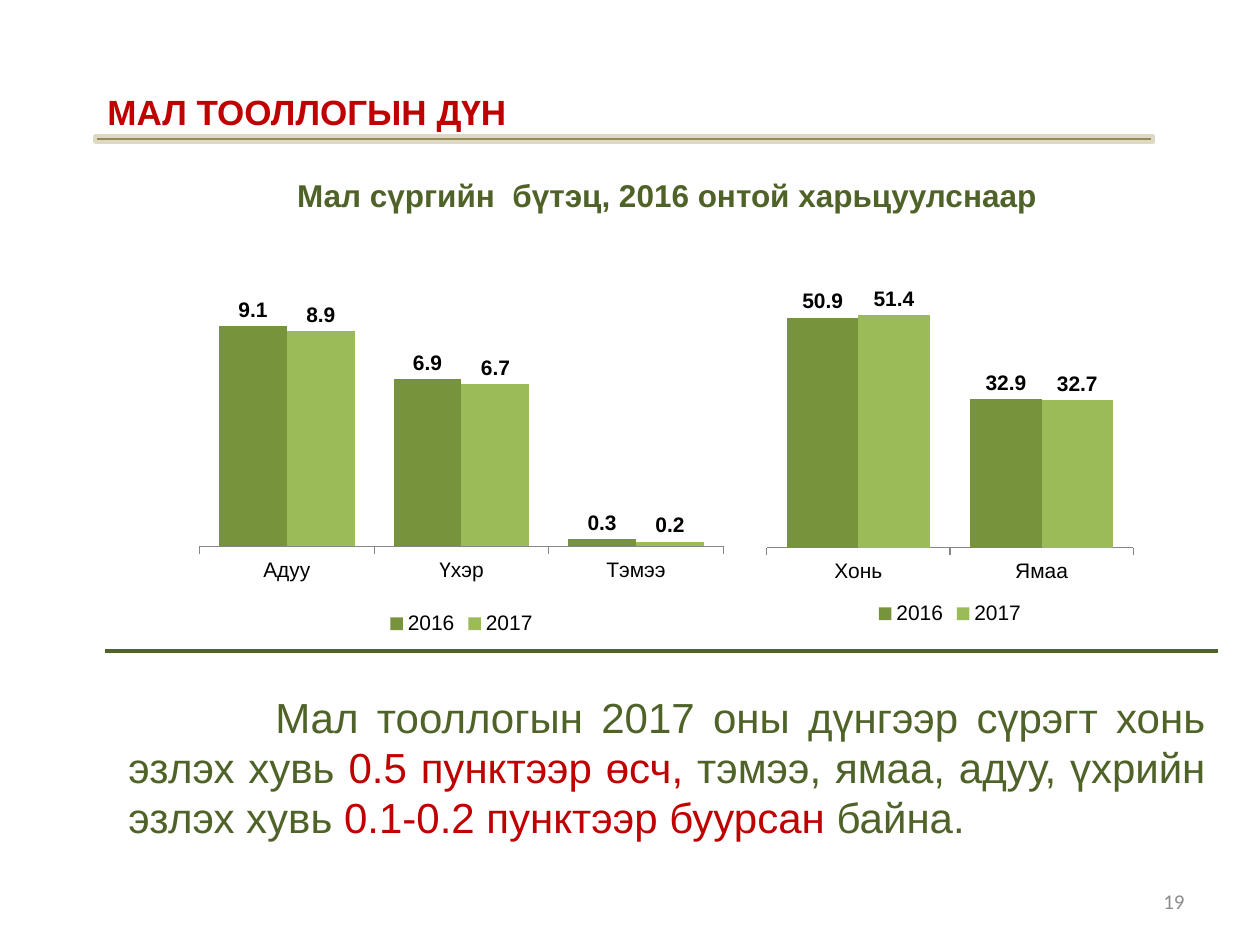
from pptx import Presentation
from pptx.chart.data import CategoryChartData
from pptx.dml.color import RGBColor
from pptx.enum.chart import XL_CHART_TYPE, XL_LABEL_POSITION, XL_LEGEND_POSITION, XL_TICK_MARK
from pptx.enum.shapes import MSO_CONNECTOR, MSO_SHAPE
from pptx.enum.text import MSO_ANCHOR, PP_ALIGN
from pptx.oxml import parse_xml
from pptx.oxml.ns import nsdecls
from pptx.util import Pt

COLUMN = XL_CHART_TYPE.COLUMN_CLUSTERED
BOTTOM = XL_LEGEND_POSITION.BOTTOM
ABOVE = XL_LABEL_POSITION.OUTSIDE_END
TICK_OUT = XL_TICK_MARK.OUTSIDE
LEFT, RIGHT, CENTER, JUST = PP_ALIGN.LEFT, PP_ALIGN.RIGHT, PP_ALIGN.CENTER, PP_ALIGN.JUSTIFY
TOP, MIDDLE = MSO_ANCHOR.TOP, MSO_ANCHOR.MIDDLE

SCALE = 914400 / 126
COLORS = {"red": "C00000", "green": "4F6228", "gold": "948A54", "sand": "DDD9C3",
          "gray": "8C8C8C", "axis": "868686", "black": "000000",
          "2016": "77933C", "2017": "9BBB59"}


def px(*vals):
    return [round(val * SCALE) for val in vals]


def add_text(box, runs, size, align, font="Arial", bold=False, anchor=TOP):
    frame = slide.shapes.add_textbox(*px(*box)).text_frame
    frame.word_wrap = True
    frame.vertical_anchor = anchor
    para = frame.paragraphs[0]
    para.alignment = align
    para.font.name, para.font.size, para.font.bold = font, Pt(size), bold
    for text, color in runs:
        run = para.add_run()
        run.text = text
        run.font.color.rgb = RGBColor.from_string(COLORS[color])
    return para


prs = Presentation()
prs.slide_width, prs.slide_height = px(1260, 945)
slide = prs.slides.add_slide(prs.slide_layouts[6])

# Page number, title and subtitle
add_text((903, 876, 294, 50), [("19", "gray")], 12, RIGHT, "Calibri", anchor=MIDDLE)
add_text((95, 84, 1165, 55), [("МАЛ ТООЛЛОГЫН ДҮН", "red")], 20, LEFT, bold=True)
add_text((105, 170, 1124, 50), [("Мал сүргийн  бүтэц, 2016 онтой харьцуулснаар", "green")],
         18, CENTER, bold=True)

# Bar under the title
bar = slide.shapes.add_shape(MSO_SHAPE.RECTANGLE, *px(95, 136, 1058, 6))
bar.shadow.inherit = False
bar.fill.solid()
bar.fill.fore_color.rgb = RGBColor.from_string(COLORS["gold"])
bar.line.color.rgb = RGBColor.from_string(COLORS["sand"])
bar.line.width = Pt(2)

# Rule above the summary
rule = slide.shapes.add_connector(MSO_CONNECTOR.STRAIGHT, *px(105, 651, 1218, 651))
rule.line.color.rgb = RGBColor.from_string(COLORS["green"])
rule.line.width = Pt(2.25)
rule._element.spPr.append(parse_xml(f"<a:effectLst {nsdecls('a')}/>"))

# Summary with an indented first line
body = add_text((116, 685, 1102, 165), [
    ("Мал тооллогын 2017 оны дүнгээр сүрэгт хонь эзлэх хувь ", "green"),
    ("0.5 пунктээр өсч, ", "red"),
    ("тэмээ, ямаа, адуу, үхрийн эзлэх хувь ", "green"),
    ("0.1-0.2 пунктээр буурсан", "red"),
    (" байна.", "green")], 24, JUST)
body._p.get_or_add_pPr().set("indent", str(px(147)[0]))

# Charts: box, plot top and height as shares, axis top, categories, values
charts = [
    ((199, 294, 525, 346), 0.03, 0.7, 10, ["Адуу", "Үхэр", "Тэмээ"],
     {"2016": [9.1, 6.9, 0.3], "2017": [8.9, 6.7, 0.2]}),
    ((766, 273, 368, 357), 0.01, 0.76, 60, ["Хонь", "Ямаа"],
     {"2016": [50.9, 32.9], "2017": [51.4, 32.7]}),
]
for box, top, high, peak, cats, rows in charts:
    data = CategoryChartData(number_format="###0.0")
    data.categories = cats
    for year, vals in rows.items():
        data.add_series(year, vals)
    chart = slide.shapes.add_chart(COLUMN, *px(*box), data).chart
    chart.has_title = False
    chart.font.name, chart.font.size = "Arial", Pt(12)
    chart.font.color.rgb = RGBColor.from_string(COLORS["black"])
    chart.has_legend = True
    chart.legend.position = BOTTOM
    chart.legend.include_in_layout = False

    axis = chart.category_axis
    axis.major_tick_mark = TICK_OUT
    axis.format.line.color.rgb = RGBColor.from_string(COLORS["axis"])
    scale = chart.value_axis
    scale.minimum_scale, scale.maximum_scale = 0, peak
    scale.has_major_gridlines = False
    scale.visible = False

    plot = chart.plots[0]
    plot.gap_width, plot.overlap = 57, 0
    plot.vary_by_categories = False
    for row in plot.series:
        row.format.fill.solid()
        row.format.fill.fore_color.rgb = RGBColor.from_string(COLORS[row.name])
        tags = row.data_labels
        tags.show_value = True
        tags.position = ABOVE
        tags.number_format, tags.number_format_is_linked = "###0.0", False
        tags.font.name, tags.font.size, tags.font.bold = "Arial", Pt(12), True

    # Fixed inner plot area
    area = chart._chartSpace.chart.plotArea
    for old in area.findall("{*}layout"):
        area.remove(old)
    area.insert(0, parse_xml(
        f"<c:layout {nsdecls('c')}><c:manualLayout><c:layoutTarget val='inner'/>"
        "<c:xMode val='edge'/><c:yMode val='edge'/>"
        f"<c:x val='0'/><c:y val='{top}'/><c:w val='1'/><c:h val='{high}'/>"
        "</c:manualLayout></c:layout>"))

prs.save("out.pptx")
